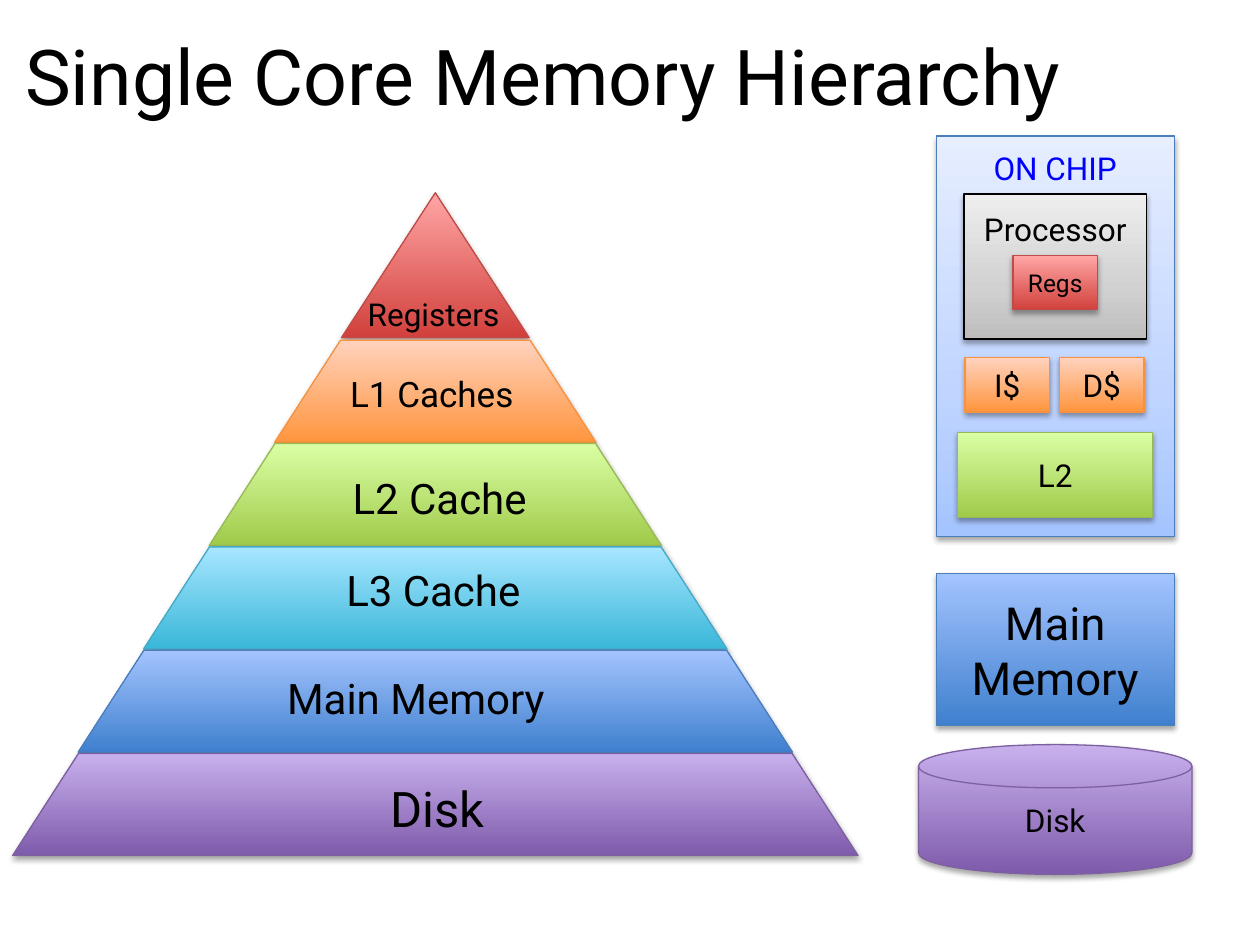
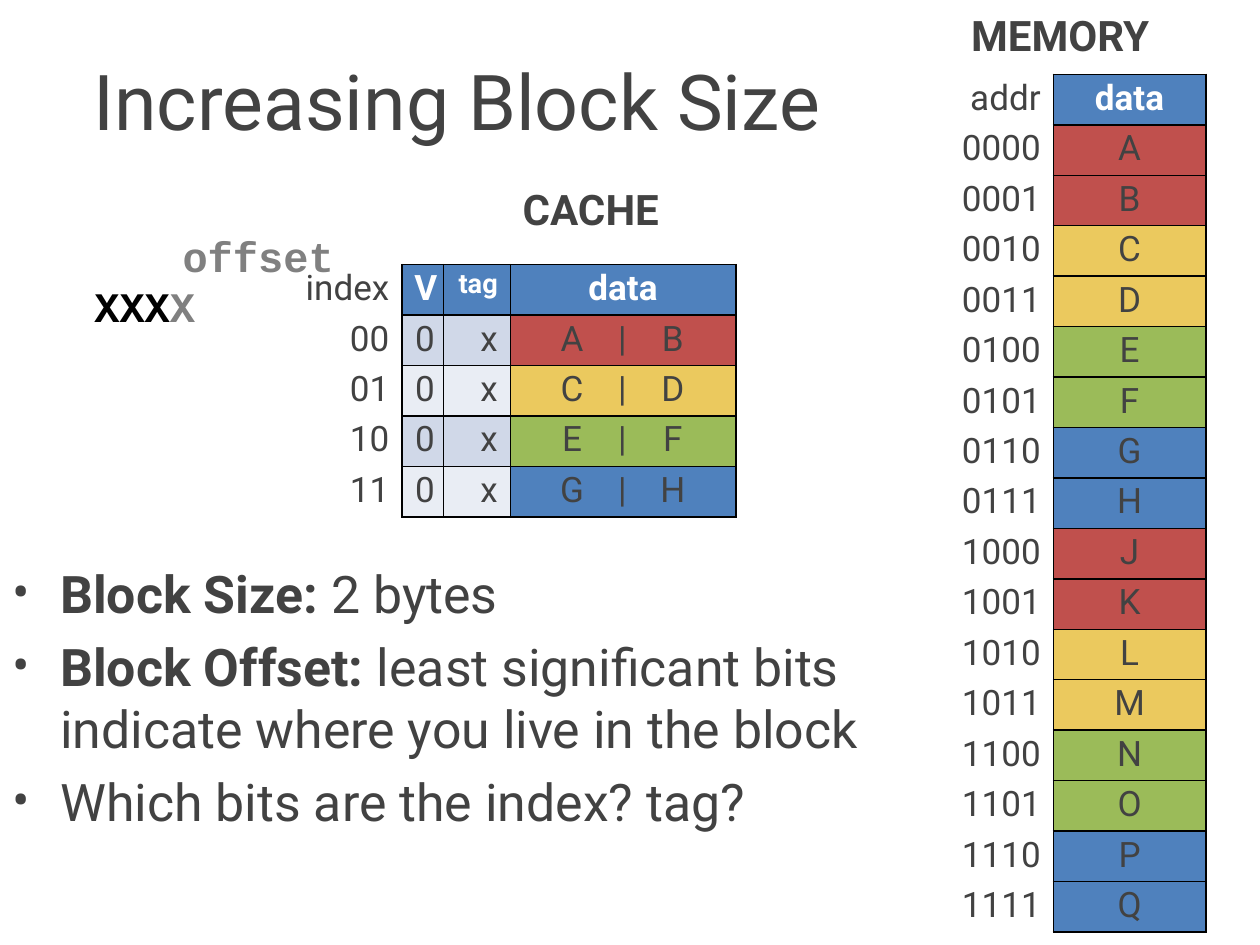
from copy import deepcopy

from lxml import etree
from pptx import Presentation
from pptx.dml.color import RGBColor
from pptx.enum.shapes import MSO_SHAPE
from pptx.enum.text import MSO_ANCHOR, MSO_AUTO_SIZE, PP_ALIGN
from pptx.oxml.ns import qn
from pptx.util import Inches, Pt

LEFT, CENTER, RIGHT = PP_ALIGN.LEFT, PP_ALIGN.CENTER, PP_ALIGN.RIGHT
TOP, MIDDLE = MSO_ANCHOR.TOP, MSO_ANCHOR.MIDDLE
FIXED, GROW = MSO_AUTO_SIZE.NONE, MSO_AUTO_SIZE.SHAPE_TO_FIT_TEXT
RECT, TRIANGLE, TRAPEZOID, DRUM = (
    MSO_SHAPE.RECTANGLE, MSO_SHAPE.ISOSCELES_TRIANGLE,
    MSO_SHAPE.TRAPEZOID, MSO_SHAPE.FLOWCHART_MAGNETIC_DISK)
FONT, MONO = "Roboto", "Courier New"

COLORS = {
    "black": "000000", "white": "FFFFFF", "text": "424242", "gray": "808080",
    "link blue": "0000FF", "header": "4F81BD",
    "band dark": "D0D8E8", "band light": "E9EDF4",
}
SET_COLORS = ["C0504D", "EBC95E", "9BBB59", "4F81BD"]

# Each level: line colour, then gradient stops from bottom to top
LEVELS = {
    "registers": ("BF4C48", [(0, "D1403C"), (1, "FFA6A5")]),
    "l1": ("F69240", [(0, "FF953E"), (1, "FFD2BD")]),
    "l2": ("98B955", [(0, "A0CA4A"), (1, "DAFFA5")]),
    "l3": ("46AAC5", [(0, "39B7D8"), (1, "A7E6FF")]),
    "memory": ("4B7EBC", [(0, "3F80CE"), (1, "A4C4FF")]),
    "disk": ("7D60A0", [(0, "7F5BAB"), (1, "C8B0ED")]),
    "chip": ("4B7EBC", [(0, "A4C4FF"), (0.35, "BFD4FF"), (1, "E6EEFF")]),
    "processor": ("000000", [(0, "BDBDBD"), (0.35, "D1D1D1"), (1, "EEEEEE")]),
}


def rgb(color):
    return RGBColor.from_string(COLORS.get(color, color))


def inches(*values):
    return [Inches(v) for v in values]


def add_run(p, text, size, color="text", bold=False, font=FONT):
    r = p.add_run()
    r.text = text
    for name, value in {"size": Pt(size), "bold": bold, "name": font}.items():
        setattr(r.font, name, value)
    r.font.color.rgb = rgb(color)


def add_title(slide, text, box, color, align):
    title = slide.shapes.title
    for name, value in zip(("left", "top", "width", "height"), inches(*box)):
        setattr(title, name, value)
    tf = title.text_frame
    tf.auto_size, tf.vertical_anchor = FIXED, MIDDLE
    p = tf.paragraphs[0]
    p.alignment = align
    add_run(p, text, 44, color)


def add_label(slide, text, box, size, color="black", bold=False):
    tf = slide.shapes.add_textbox(*inches(*box)).text_frame
    tf.word_wrap, tf.auto_size = False, GROW
    add_run(tf.paragraphs[0], text, size, color, bold)


def add_shadow(s):
    effects = etree.SubElement(s._element.spPr, qn("a:effectLst"))
    shadow = etree.SubElement(
        effects, qn("a:outerShdw"), blurRad=str(Pt(3.1)), dist=str(Pt(1.8)),
        dir="5400000", rotWithShape="0")
    color = etree.SubElement(shadow, qn("a:srgbClr"), val=COLORS["black"])
    etree.SubElement(color, qn("a:alpha"), val="35000")


def add_block(slide, kind, level, box):
    """Add a gradient shape in the colours of a memory level."""
    s = slide.shapes.add_shape(kind, *inches(*box))
    line, stops = LEVELS[level]
    s.line.color.rgb, s.line.width = rgb(line), Pt(0.75)
    s.fill.gradient()
    s.fill.gradient_angle = 90
    gs_list = s._element.spPr.find(".//" + qn("a:gsLst"))
    while len(gs_list) < len(stops):
        gs_list.append(deepcopy(gs_list[0]))
    for stop, (position, color) in zip(s.fill.gradient_stops, stops):
        stop.position, stop.color.rgb = position, rgb(color)
    add_shadow(s)
    return s


def add_pyramid(slide, x, y):
    add_block(slide, TRIANGLE, "registers", (x + 2.61, y, 1.49, 1.15))
    height, growth = 0.82, 1.04
    for i, level in enumerate(("l1", "l2", "l3", "memory", "disk")):
        box = (x + (4 - i) * growth / 2, y + 1.17 + i * height,
               2.55 + i * growth, height - 0.01)
        add_block(slide, TRAPEZOID, level, box).adjustments[0] = 0.646
    labels = [
        ("Registers", 18, 2.72, 0.76, 1.27), ("L1 Caches", 20, 2.58, 1.38, 1.54),
        ("L2 Cache", 24, 2.6, 2.17, 1.64), ("L3 Cache", 24, 2.55, 2.9, 1.64),
        ("Main Memory", 24, 2.08, 3.76, 2.3), ("Disk", 28, 2.9, 4.6, 0.97),
    ]
    for text, size, dx, dy, width in labels:
        add_label(slide, text, (x + dx, y + dy, width, size / 50), size)


def add_computer(slide, x, y):
    # kind, level, text, size, colour, offset box, top inset (None: centred)
    parts = [
        (RECT, "chip", "ON CHIP", 18, "link blue", (0.14, 0, 1.89, 3.18), 0.1),
        (DRUM, "disk", "Disk", 18, "black", (0, 4.83, 2.17, 1.03), None),
        (RECT, "processor", "Processor", 18, "black", (0.36, 0.46, 1.45, 1.15), 0.13),
        (RECT, "registers", "Regs", 14, "black", (0.75, 0.95, 0.67, 0.43), None),
        (RECT, "l1", "I$", 18, "black", (0.37, 1.76, 0.67, 0.43), None),
        (RECT, "l1", "D$", 18, "black", (1.12, 1.76, 0.67, 0.43), None),
        (RECT, "l2", "L2", 18, "black", (0.31, 2.35, 1.55, 0.68), None),
        (RECT, "memory", "Main Memory", 26, "black", (0.14, 3.47, 1.89, 1.21), None),
    ]
    for kind, level, text, size, color, (dx, dy, w, h), inset in parts:
        tf = add_block(slide, kind, level, (x + dx, y + dy, w, h)).text_frame
        tf.word_wrap = True
        tf.vertical_anchor = MIDDLE if inset is None else TOP
        if inset is not None:
            tf.margin_top = Inches(inset)
        p = tf.paragraphs[0]
        p.alignment = CENTER
        add_run(p, text, size, color)


def set_borders(cell, sides):
    """Draw black lines on the named sides (L, R, T, B) and none elsewhere."""
    tc_pr = cell._tc.get_or_add_tcPr()
    for i, side in enumerate("LRTB"):
        line = etree.Element(qn("a:ln" + side), w=str(Pt(1)))
        if side in sides:
            fill = etree.SubElement(line, qn("a:solidFill"))
            etree.SubElement(fill, qn("a:srgbClr"), val=COLORS["black"])
        else:
            etree.SubElement(line, qn("a:noFill"))
        tc_pr.insert(i, line)


def add_tabs(p, stops):
    tabs = etree.SubElement(p._p.get_or_add_pPr(), qn("a:tabLst"))
    for stop in stops:
        etree.SubElement(tabs, qn("a:tab"), pos=str(Inches(stop)), algn="ctr")


def fill_cell(cell, text, align, fill=None, color="text", bold=False, size=20,
              sides="LRTB"):
    p = cell.text_frame.paragraphs[0]
    p.alignment, p.line_spacing = align, 0.9
    if align == RIGHT:
        cell.margin_left = Inches(0.05)
    add_run(p, text, size, color, bold)
    if fill:
        cell.fill.solid()
        cell.fill.fore_color.rgb = rgb(fill)
    else:
        cell.fill.background()
    set_borders(cell, sides)


def add_grid(slide, x, y, widths, rows):
    height = 0.4
    box = inches(x, y, sum(widths), rows * height)
    table = slide.shapes.add_table(rows, len(widths), *box).table
    table.first_row = table.horz_banding = False
    for column, width in zip(table.columns, widths):
        column.width = Inches(width)
    for row in table.rows:
        row.height = Inches(height)
    return table


def add_memory(slide, x, y):
    add_label(slide, "MEMORY", (x + 0.1, y, 1.7, 0.5), 24, "text", True)
    values = "ABCDEFGHJKLMNOPQ"
    table = add_grid(slide, x, y + 0.56, (0.85, 1.21), len(values) + 1)
    fill_cell(table.cell(0, 0), "addr", RIGHT, "white", sides="R")
    fill_cell(table.cell(0, 1), "data", CENTER, "header", "white", True)
    for i, value in enumerate(values):
        fill_cell(table.cell(i + 1, 0), f"{i:04b}", RIGHT, "white", sides="R")
        fill_cell(table.cell(i + 1, 1), value, CENTER, SET_COLORS[i // 2 % 4])


def add_cache(slide, x, y):
    add_label(slide, "CACHE", (x + 1.91, y, 1.4, 0.5), 24, "text", True)
    index = add_grid(slide, x, y + 0.69, (1.05,), 5)
    for i, text in enumerate(("index", "00", "01", "10", "11")):
        fill_cell(index.cell(i, 0), text, RIGHT, sides="")

    table = add_grid(slide, x + 1.05, y + 0.69, (0.33, 0.53, 1.79), 5)
    headers = (("V", RIGHT, 20), ("tag", RIGHT, 15.5), ("data", CENTER, 20))
    for col, (text, align, size) in enumerate(headers):
        fill_cell(table.cell(0, col), text, align, "header", "white", True, size)
    for i, pair in enumerate(("AB", "CD", "EF", "GH")):
        band = "band light" if i % 2 else "band dark"
        fill_cell(table.cell(i + 1, 0), "0", RIGHT, band)
        fill_cell(table.cell(i + 1, 1), "x", RIGHT, band)
        block = table.cell(i + 1, 2)
        fill_cell(block, "\t{}\t|\t{}".format(*pair), LEFT, SET_COLORS[i])
        add_tabs(block.text_frame.paragraphs[0], (0.39, 0.79, 1.19))
    for row in range(5):
        table.cell(row, 0).margin_right = Inches(0.07 if row else 0.05)


def add_address_bits(slide, box):
    tf = slide.shapes.add_textbox(*inches(*box)).text_frame
    tf.word_wrap = True
    lines = [(1.2, [("offset", "gray")]), (0.5, [("XXX", "black"), ("X", "gray")])]
    for i, (indent, runs) in enumerate(lines):
        p = tf.add_paragraph() if i else tf.paragraphs[0]
        p._p.get_or_add_pPr().set("marL", str(Inches(indent)))
        for text, color in runs:
            add_run(p, text, 24, color, True, MONO)


def add_bullets(slide, box):
    tf = slide.shapes.add_textbox(*inches(*box)).text_frame
    tf.word_wrap = True
    bullets = [
        [("Block Size: ", True), ("2 bytes", False)],
        [("Block Offset:", True),
         (" least significant bits indicate where you live in the block", False)],
        [("Which bits are the index? tag?", False)],
    ]
    for i, runs in enumerate(bullets):
        p = tf.add_paragraph() if i else tf.paragraphs[0]
        p.space_before = Pt(6)
        p_pr = p._p.get_or_add_pPr()
        p_pr.set("marL", str(Inches(0.38)))
        p_pr.set("indent", str(Inches(-0.38)))
        etree.SubElement(p_pr, qn("a:buFont"), typeface=FONT)
        etree.SubElement(p_pr, qn("a:buChar"), char="•")
        for text, bold in runs:
            add_run(p, text, 29.6, bold=bold)


def build_hierarchy_slide(slide):
    add_title(slide, "Single Core Memory Hierarchy", (0.1, 0.11, 9.8, 0.97),
              "black", LEFT)
    add_computer(slide, 7.29, 1.08)
    add_pyramid(slide, 0.1, 1.53)


def build_block_size_slide(slide):
    add_title(slide, "Increasing Block Size", (0.5, 0.17, 6.26, 1.25),
              "text", CENTER)
    add_memory(slide, 7.51, 0.03)
    add_cache(slide, 2.14, 1.41)
    add_bullets(slide, (0, 4.41, 7.04, 2.26))
    add_address_bits(slide, (0.15, 1.78, 3.51, 1.31))


def main():
    prs = Presentation()
    prs.slide_width, prs.slide_height = inches(10, 7.5)
    title_only = prs.slide_layouts[5]
    for build in (build_hierarchy_slide, build_block_size_slide):
        build(prs.slides.add_slide(title_only))
    prs.save("out.pptx")


if __name__ == "__main__":
    main()
